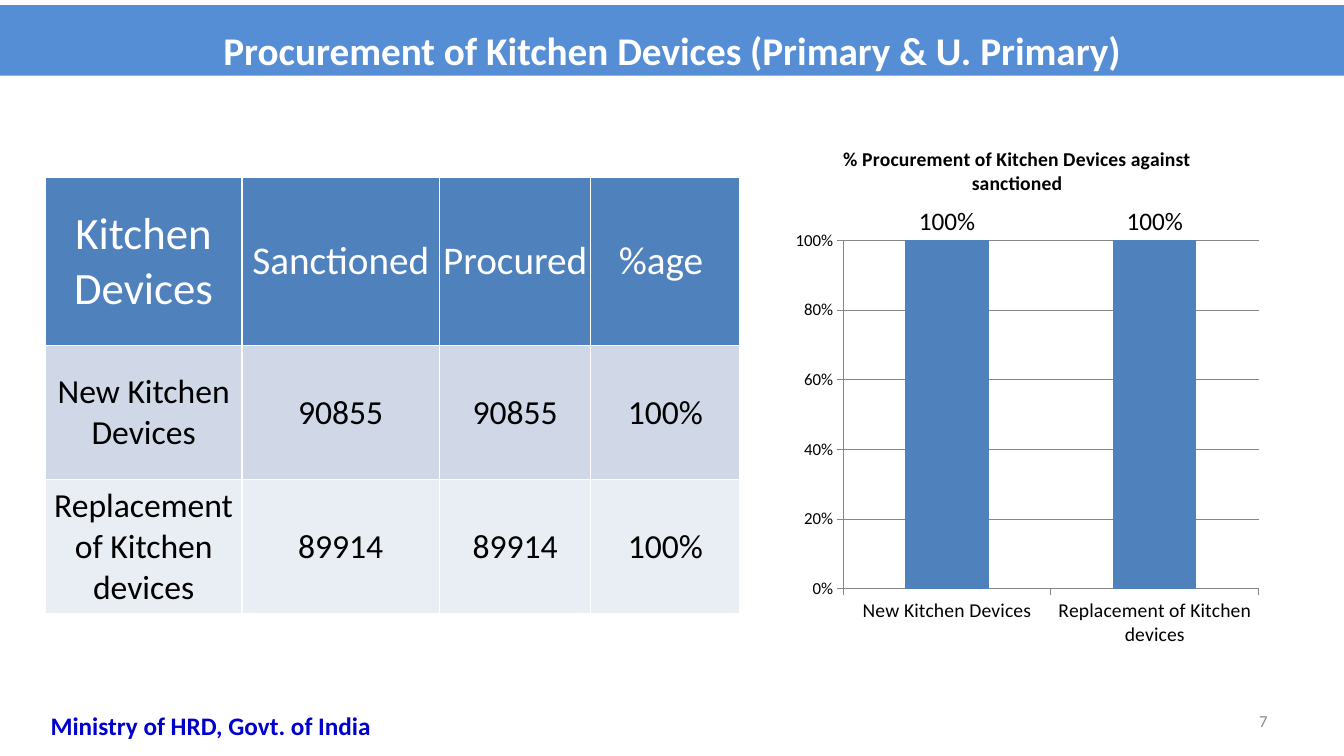
from lxml import etree
from pptx import Presentation
from pptx.chart.data import CategoryChartData
from pptx.dml.color import RGBColor
from pptx.enum.chart import XL_CHART_TYPE, XL_LABEL_POSITION, XL_TICK_MARK
from pptx.enum.text import MSO_ANCHOR, PP_ALIGN
from pptx.oxml.ns import qn
from pptx.util import Inches, Pt

CENTER, RIGHT = PP_ALIGN.CENTER, PP_ALIGN.RIGHT
TOP, MIDDLE = MSO_ANCHOR.TOP, MSO_ANCHOR.MIDDLE
COLUMNS = XL_CHART_TYPE.COLUMN_CLUSTERED
OUTSIDE_END = XL_LABEL_POSITION.OUTSIDE_END
TICK_OUT = XL_TICK_MARK.OUTSIDE

BANNER = RGBColor(0x55, 0x8E, 0xD5)
ACCENT = RGBColor(0x4F, 0x81, 0xBD)
BANDS = [RGBColor(0xD0, 0xD8, 0xE8), RGBColor(0xE9, 0xED, 0xF4)]
WHITE = RGBColor(0xFF, 0xFF, 0xFF)
BLACK = RGBColor(0, 0, 0)
GREY = RGBColor(0x8C, 0x8C, 0x8C)
AXIS_GREY = RGBColor(0x86, 0x86, 0x86)
BLUE = RGBColor(0, 0, 0xCC)
FONT = "Calibri"

TITLE = "Procurement of Kitchen Devices (Primary & U. Primary)"
ROWS = [
    ("Kitchen Devices", "Sanctioned", "Procured", "%age "),
    ("New Kitchen Devices", "90855", "90855", "100%"),
    ("Replacement of Kitchen devices", "89914", "89914", "100%"),
]
COLUMN_WIDTHS = [1.95, 1.96, 1.5, 1.48]
ROW_HEIGHTS = [1.67, 1.33, 1.33]
CHART_TITLE = "% Procurement of Kitchen Devices against sanctioned"
PERCENTAGES = [1, 1]
PLOT_LAYOUT = {"x": 0.14, "y": 0.22, "w": 0.86, "h": 0.67}
FOOTERS = [
    ("7", (9.56, 6.95, 3.11, 0.4), 12, GREY, False, RIGHT, MIDDLE),
    ("Ministry of HRD, Govt. of India", (0.13, 7, 3.92, 0.4), 18, BLUE, True, CENTER, TOP),
]


def style_font(font, size, color, bold=False):
    font.name = FONT
    font.size = Pt(size)
    font.bold = bold
    font.color.rgb = color


def add_title(page):
    box = page.shapes.title
    box.left, box.top, box.width, box.height = map(Inches, (0, 0.05, 13.33, 0.7))
    box.fill.solid()
    box.fill.fore_color.rgb = BANNER
    frame = box.text_frame
    frame.text = TITLE
    frame.vertical_anchor = MIDDLE
    para = frame.paragraphs[0]
    para.alignment = CENTER
    para.line_spacing = 1.4
    style_font(para.font, 28, WHITE, True)


def add_device_table(page):
    table = page.shapes.add_table(
        len(ROWS), len(COLUMN_WIDTHS), Inches(0.45), Inches(1.76),
        Inches(sum(COLUMN_WIDTHS)), Inches(sum(ROW_HEIGHTS))).table
    for column, width in zip(table.columns, COLUMN_WIDTHS):
        column.width = Inches(width)
    for row_index, (row, height) in enumerate(zip(table.rows, ROW_HEIGHTS)):
        row.height = Inches(height)
        header = row_index == 0
        for column_index, cell in enumerate(row.cells):
            cell.text = ROWS[row_index][column_index]
            cell.vertical_anchor = MIDDLE
            cell.margin_left = cell.margin_right = 0
            cell.margin_top = cell.margin_bottom = 0
            cell.fill.solid()
            cell.fill.fore_color.rgb = ACCENT if header else BANDS[row_index - 1]
            para = cell.text_frame.paragraphs[0]
            para.alignment = CENTER
            header_size = 32 if column_index == 0 else 28
            style_font(para.font, header_size if header else 24, WHITE if header else BLACK)


def place_plot(chart):
    area = chart._chartSpace.chart.plotArea
    for old in area.findall(qn("c:layout")):
        area.remove(old)
    layout = etree.Element(qn("c:layout"))
    manual = etree.SubElement(layout, qn("c:manualLayout"))
    settings = {"layoutTarget": "inner", "xMode": "edge", "yMode": "edge", **PLOT_LAYOUT}
    for name, value in settings.items():
        etree.SubElement(manual, qn("c:" + name)).set("val", str(value))
    area.insert(0, layout)


def add_procurement_chart(page):
    data = CategoryChartData(number_format="0%")
    data.categories = [row[0] for row in ROWS[1:]]
    data.add_series("Series 1", PERCENTAGES)
    chart = page.shapes.add_chart(
        COLUMNS, *map(Inches, (7.69, 1.25, 4.8, 5.17)), data).chart
    style_font(chart.font, 18, BLACK)
    chart.has_legend = False
    chart.has_title = True
    chart.chart_title.include_in_layout = False
    frame = chart.chart_title.text_frame
    frame.text = CHART_TITLE
    style_font(frame.paragraphs[0].font, 14, BLACK, True)

    plot = chart.plots[0]
    plot.vary_by_categories = False
    plot.gap_width = 150
    plot.has_data_labels = True
    labels = plot.data_labels
    labels.show_value = True
    labels.number_format = "0%"
    labels.number_format_is_linked = False
    labels.position = OUTSIDE_END
    style_font(labels.font, 18, BLACK)
    series = plot.series[0]
    series.format.fill.solid()
    series.format.fill.fore_color.rgb = ACCENT

    values = chart.value_axis
    values.minimum_scale, values.maximum_scale, values.major_unit = 0, 1, 0.2
    values.has_major_gridlines = True
    values.major_gridlines.format.line.color.rgb = AXIS_GREY
    values.tick_labels.number_format = "0%"
    values.tick_labels.number_format_is_linked = False
    for axis, size in ((values, 12), (chart.category_axis, 14)):
        axis.major_tick_mark = TICK_OUT
        axis.format.line.color.rgb = AXIS_GREY
        style_font(axis.tick_labels.font, size, BLACK)
    place_plot(chart)


def add_footers(page):
    for text, bounds, size, color, bold, alignment, anchor in FOOTERS:
        frame = page.shapes.add_textbox(*map(Inches, bounds)).text_frame
        frame.word_wrap = True
        frame.vertical_anchor = anchor
        frame.text = text
        para = frame.paragraphs[0]
        para.alignment = alignment
        style_font(para.font, size, color, bold)


def main():
    deck = Presentation()
    deck.slide_width, deck.slide_height = Inches(13.33), Inches(7.5)
    page = deck.slides.add_slide(deck.slide_layouts[5])
    add_title(page)
    add_device_table(page)
    add_procurement_chart(page)
    add_footers(page)
    deck.save("out.pptx")


if __name__ == "__main__":
    main()
